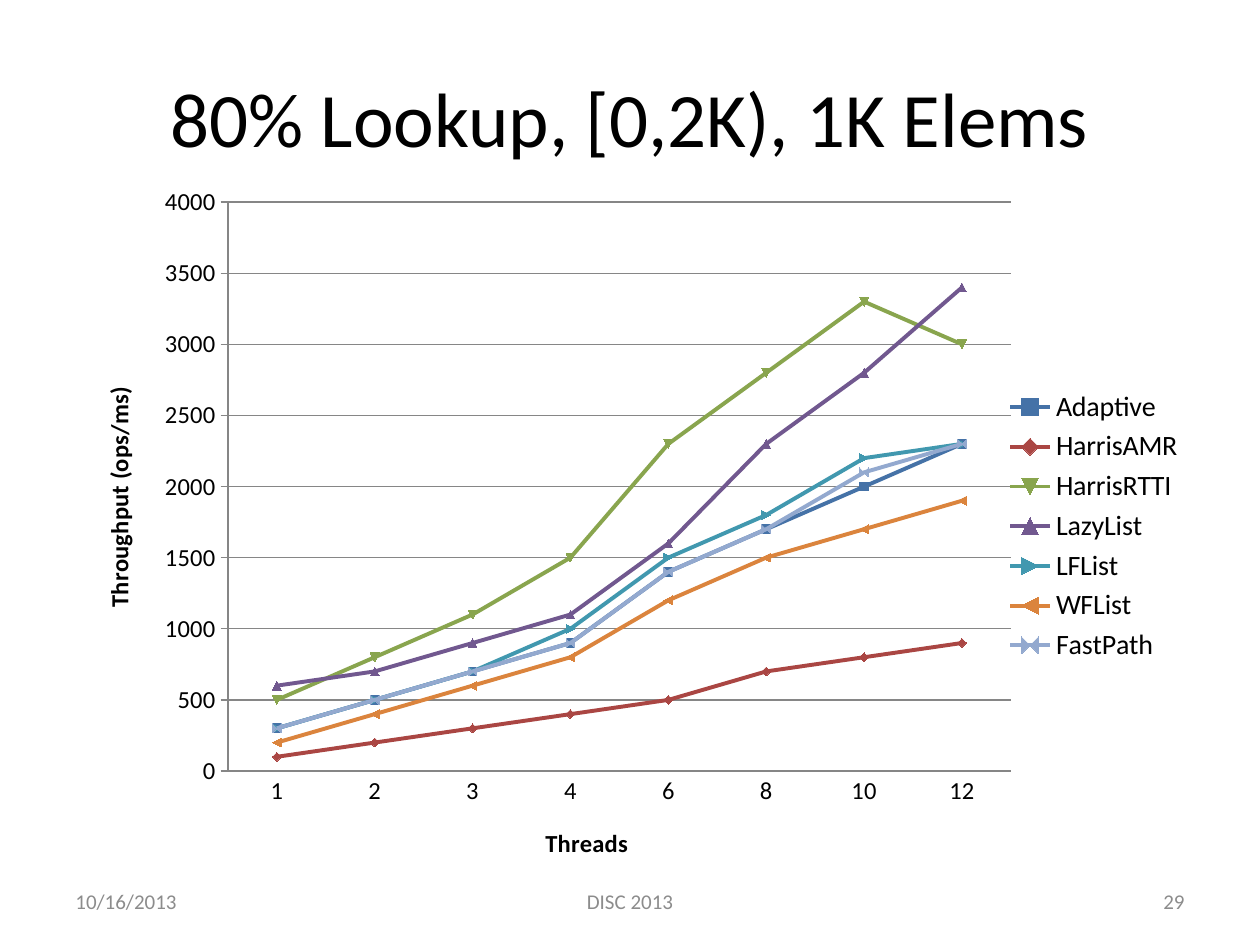
from dataclasses import dataclass

from lxml import etree
from pptx import Presentation
from pptx import util as u
from pptx.chart.data import CategoryChartData
from pptx.dml.color import RGBColor
from pptx.enum import chart as ch, text
from pptx.oxml.ns import qn

FONT = "Calibri"
COLORS = {
    "text": "000000", "footer": "8C8C8C", "axis": "868686",
    "Adaptive": "4572A7", "HarrisAMR": "AA4643", "HarrisRTTI": "89A54E",
    "LazyList": "71588F", "LFList": "4198AF", "WFList": "DB843D",
    "FastPath": "93A9CF",
}
THREADS = ["1", "2", "3", "4", "6", "8", "10", "12"]
THROUGHPUT = {
    "Adaptive": [300, 500, 700, 900, 1400, 1700, 2000, 2300],
    "HarrisAMR": [100, 200, 300, 400, 500, 700, 800, 900],
    "HarrisRTTI": [500, 800, 1100, 1500, 2300, 2800, 3300, 3000],
    "LazyList": [600, 700, 900, 1100, 1600, 2300, 2800, 3400],
    "LFList": [300, 500, 700, 1000, 1500, 1800, 2200, 2300],
    "WFList": [200, 400, 600, 800, 1200, 1500, 1700, 1900],
    "FastPath": [300, 500, 700, 900, 1400, 1700, 2100, 2300],
}


@dataclass
class Label:
    words: str
    left: float
    top: float
    width: float
    height: float
    size: float
    color: str
    align: text.PP_ALIGN


LABELS = [
    Label("80% Lookup, [0,2K), 1K Elems", 36, 21.6, 648, 90, 44, "text", text.PP_ALIGN.CENTER),
    Label("10/16/2013", 36, 500.5, 168, 28.75, 12, "footer", text.PP_ALIGN.LEFT),
    Label("DISC 2013", 246, 500.5, 228, 28.75, 12, "footer", text.PP_ALIGN.CENTER),
    Label("29", 516, 500.5, 168, 28.75, 12, "footer", text.PP_ALIGN.RIGHT),
]


def rgb(name: str) -> RGBColor:
    return RGBColor.from_string(COLORS[name])


def set_font(font, size: float, color: str = "text", bold: bool = False) -> None:
    font.name, font.size, font.bold = FONT, u.Pt(size), bold
    font.color.rgb = rgb(color)


def set_line(line, color: str, width: float) -> None:
    line.color.rgb = rgb(color)
    line.width = u.Pt(width)


def add_label(s, label: Label) -> None:
    box = s.shapes.add_textbox(u.Pt(label.left), u.Pt(label.top),
                               u.Pt(label.width), u.Pt(label.height))
    tf = box.text_frame
    tf.word_wrap = True
    tf.vertical_anchor = text.MSO_ANCHOR.MIDDLE
    p = tf.paragraphs[0]
    p.text, p.alignment = label.words, label.align
    set_font(p.font, label.size, label.color)


def place(parent, index: int, **percents: float) -> None:
    """Give a chart part a manual layout in percent of the chart area."""
    for old in parent.findall(qn("c:layout")):
        parent.remove(old)
    layout = etree.Element(qn("c:layout"))
    manual = etree.SubElement(layout, qn("c:manualLayout"))
    settings = {"xMode": "edge", "yMode": "edge"}
    if "w" in percents:
        settings = {"layoutTarget": "inner", **settings}
    settings.update({tag: value / 100 for tag, value in percents.items()})
    for tag, value in settings.items():
        etree.SubElement(manual, qn(f"c:{tag}")).set("val", str(value))
    parent.insert(index, layout)


def style_axis(axis, title: str, x: float, y: float) -> None:
    set_font(axis.tick_labels.font, 14)
    set_line(axis.format.line, "axis", 0.75)
    tf = axis.axis_title.text_frame
    tf.text = title
    set_font(tf.paragraphs[0].font, 14, bold=True)
    place(axis.axis_title._element, 1, x=x, y=y)


def add_throughput_chart(s) -> None:
    data = CategoryChartData()
    data.categories = THREADS
    for name, values in THROUGHPUT.items():
        data.add_series(name, values)
    chart = s.shapes.add_chart(ch.XL_CHART_TYPE.LINE_MARKERS, u.Pt(24), u.Pt(102),
                               u.Pt(660), u.Pt(397.5), data).chart
    set_font(chart.font, 10)
    chart.has_title = False
    chart.has_legend = True
    chart.legend.position = ch.XL_LEGEND_POSITION.RIGHT
    chart.legend.include_in_layout = False
    set_font(chart.legend.font, 16)

    style_axis(chart.category_axis, "Threads", 43.2, 92.4)
    chart.category_axis.major_tick_mark = ch.XL_TICK_MARK.NONE
    axis = chart.value_axis
    style_axis(axis, "Throughput (ops/ms)", 4.8, 29.3)
    axis.minimum_scale, axis.maximum_scale, axis.major_unit = 0, 4000, 500
    axis.major_tick_mark = ch.XL_TICK_MARK.OUTSIDE
    axis.has_major_gridlines = True
    set_line(axis.major_gridlines.format.line, "axis", 0.75)

    plot = chart.plots[0]
    plot.vary_by_categories = False
    place(plot._element.getparent(), 0, x=16.1, y=3.4, w=67.8, h=81.8)
    for series in plot.series:
        series.smooth = False
        set_line(series.format.line, series.name, 2.25)
        marker = series.marker
        marker.size = 5
        marker.format.fill.solid()
        marker.format.fill.fore_color.rgb = rgb(series.name)
        set_line(marker.format.line, series.name, 0.75)


def main() -> None:
    prs = Presentation()
    prs.slide_width, prs.slide_height = u.Pt(720), u.Pt(540)
    s = prs.slides.add_slide(prs.slide_layouts[6])
    for label in LABELS:
        add_label(s, label)
    add_throughput_chart(s)
    prs.save("out.pptx")


if __name__ == "__main__":
    main()
